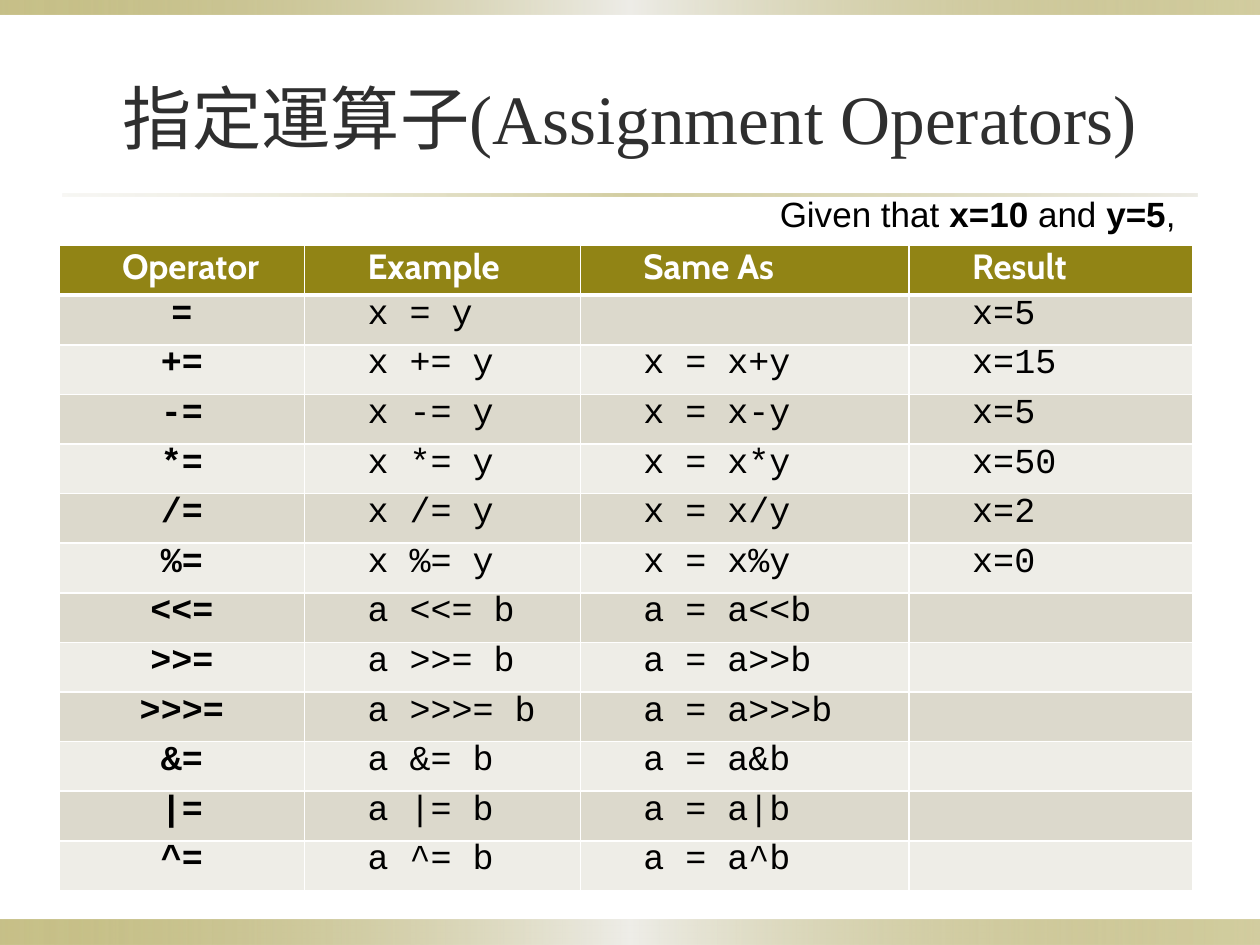
"""Builds a slide with a table of assignment operators."""
from lxml.etree import SubElement as Sub
from pptx import Presentation
from pptx.dml.color import RGBColor
from pptx.enum.shapes import MSO_SHAPE
from pptx.enum.text import MSO_ANCHOR, MSO_AUTO_SIZE, PP_ALIGN
from pptx.oxml.ns import qn
from pptx.util import Cm, Pt

OLIVE = RGBColor(0x91, 0x84, 0x15)
SAND = RGBColor(0xDC, 0xD9, 0xCC)
PALE = RGBColor(0xEE, 0xED, 0xE7)
SHINE = RGBColor(0xEE, 0xED, 0xE8)
DARK = RGBColor(0x2F, 0x2F, 0x2F)
BLACK = RGBColor(0, 0, 0)
WHITE = RGBColor(0xFF, 0xFF, 0xFF)


def set_font(font, name, size, color, bold=False):
    font.name, font.size, font.bold = name, Pt(size), bold
    font.color.rgb = color


def add_solid(parent, color, alpha=100):
    clr = Sub(parent, qn("a:srgbClr"), val=str(color))
    if alpha < 100:
        Sub(clr, qn("a:alpha"), val=str(alpha * 1000))


prs = Presentation()
prs.slide_width, prs.slide_height = Cm(25.4), Cm(19.05)
s = prs.slides.add_slide(prs.slide_layouts[6])

bar_stops = [(OLIVE, 50), (SHINE, 100), (OLIVE, 40)]
rule_stops = [(SAND, 20), (OLIVE, 40), (SAND, 50)]
bands = [
    (0, 18.54, 25.4, 0.51, bar_stops),
    (0, 0, 25.4, 0.3, bar_stops),
    (1.27, 3.91, 22.86, 0.06, rule_stops),
]
for x, y, w, h, stops in bands:
    sp = s.shapes.add_shape(MSO_SHAPE.RECTANGLE, Cm(x), Cm(y), Cm(w), Cm(h))
    sp.shadow.inherit = False
    sp.line.fill.background()
    sp.fill.gradient()
    sp.fill.gradient_angle = 0
    gs_list = sp._element.spPr.find(qn("a:gradFill")).find(qn("a:gsLst"))
    gs_list.clear()
    for i, (color, alpha) in enumerate(stops):
        add_solid(Sub(gs_list, qn("a:gs"), pos=str(i * 50000)), color, alpha)

title = s.shapes.add_textbox(Cm(1.27), Cm(0.76), Cm(22.86), Cm(3.18))
tf = title.text_frame
tf.word_wrap = True
tf.vertical_anchor = MSO_ANCHOR.MIDDLE
p = tf.paragraphs[0]
p.text = "指定運算子(Assignment Operators)"
p.alignment = PP_ALIGN.CENTER
set_font(p.font, "Times New Roman", 39.6, DARK)

rows = [
    ("Operator", "Example", "Same As", "Result"),
    ("=", "x = y", "", "x=5"),
    ("+=", "x += y", "x = x+y", "x=15"),
    ("-=", "x -= y", "x = x-y", "x=5"),
    ("*=", "x *= y", "x = x*y", "x=50"),
    ("/=", "x /= y", "x = x/y", "x=2"),
    ("%=", "x %= y", "x = x%y", "x=0"),
    ("<<=", "a <<= b", "a = a<<b", ""),
    (">>=", "a >>= b", "a = a>>b", ""),
    (">>>=", "a >>>= b", "a = a>>>b", ""),
    ("&=", "a &= b", "a = a&b", ""),
    ("|=", "a |= b", "a = a|b", ""),
    ("^=", "a ^= b", "a = a^b", ""),
]
col_widths = [4.95, 5.56, 6.63, 5.72]
table = s.shapes.add_table(len(rows), len(col_widths), Cm(1.19), Cm(4.95),
                           Cm(sum(col_widths)), Cm(len(rows))).table
table.horz_banding = False
for col, width in zip(table.columns, col_widths):
    col.width = Cm(width)

for i, row in enumerate(rows):
    table.rows[i].height = Cm(1)
    for j, text in enumerate(row):
        cell = table.cell(i, j)
        cell.margin_left = cell.margin_right = 0
        cell.margin_top = cell.margin_bottom = 0
        thick = {0: "lnB", 1: "lnT"}.get(i)
        for side in ("lnL", "lnR", "lnT", "lnB"):
            width = Pt(3 if side == thick else 1)
            ln = Sub(cell._tc.get_or_add_tcPr(), qn(f"a:{side}"), w=str(width))
            add_solid(Sub(ln, qn("a:solidFill")), WHITE)
        cell.fill.solid()
        cell.fill.fore_color.rgb = OLIVE if i == 0 else SAND if i % 2 else PALE

        p = cell.text_frame.paragraphs[0]
        p.text = text
        if i and j == 0:
            p.alignment = PP_ALIGN.CENTER
        else:
            p.level = 1
            p._p.get_or_add_pPr().set("marL", str(Cm(1.27)))
        if i == 0:
            set_font(p.font, "Cabin", 20, WHITE, True)
        else:
            set_font(p.font, "Courier New", 20, BLACK, j == 0)

given = s.shapes.add_textbox(Cm(15.47), Cm(3.76), Cm(8.53), Cm(1.12))
tf = given.text_frame
tf.word_wrap = False
tf.auto_size = MSO_AUTO_SIZE.SHAPE_TO_FIT_TEXT
p = tf.paragraphs[0]
for i, text in enumerate(["Given that ", "x=10", " and ", "y=5", ","]):
    r = p.add_run()
    r.text = text
    set_font(r.font, "Arial", 20, BLACK, i % 2 == 1)

prs.save("out.pptx")
